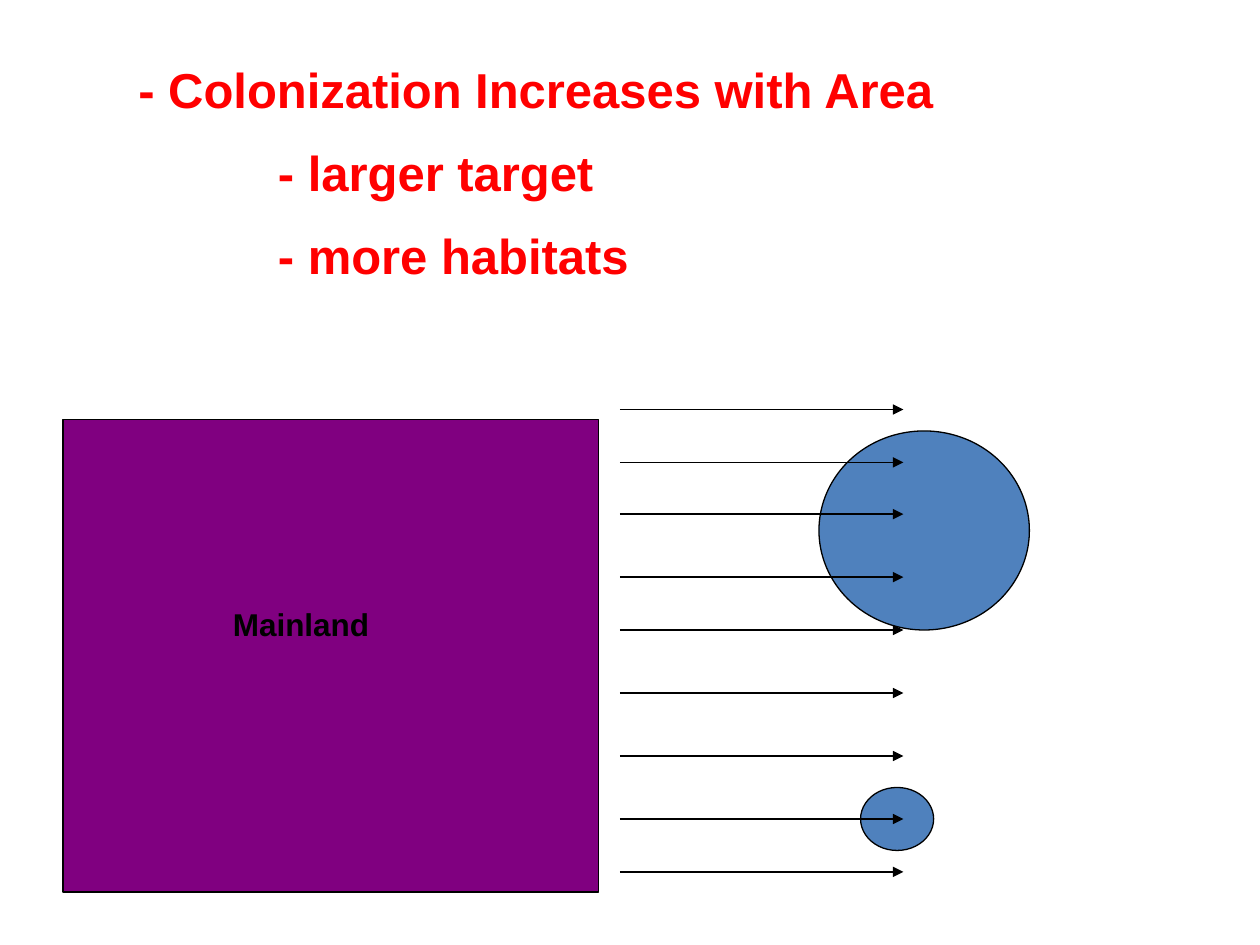
from pptx import Presentation
from pptx.dml.color import RGBColor
from pptx.enum.shapes import MSO_CONNECTOR as Link, MSO_SHAPE as Kind
from pptx.oxml.ns import qn
from pptx.util import Inches, Pt
from lxml.etree import SubElement

RED = RGBColor(0xFF, 0, 0)
BLACK = RGBColor(0, 0, 0)
PURPLE = RGBColor(0x80, 0, 0x80)
BLUE = RGBColor(0x4F, 0x81, 0xBD)

POINTS = [
    "- Colonization Increases with Area",
    "\t - larger target",
    "\t - more habitats",
]
LAND = (0.5, 3.33, 4.25, 3.75)
ISLES = [(6.5, 3.42, 1.67, 1.58), (6.83, 6.25, 0.58, 0.5)]
START, END = 4.92, 7.17
ROWS = [3.25, 3.67, 4.08, 4.58, 5, 5.5, 6, 6.5, 6.92]


def add_text(slide, box, lines, size, color):
    frame = slide.shapes.add_textbox(*map(Inches, box)).text_frame
    frame.word_wrap = True
    frame.text = "\n".join(lines)
    for i, para in enumerate(frame.paragraphs):
        if i:
            para.space_before = Pt(size * 0.5)
            tabs = SubElement(para._p.get_or_add_pPr(), qn("a:tabLst"))
            SubElement(tabs, qn("a:tab"), pos=str(Inches(1)), algn="l")
        for run in para.runs:
            font = run.font
            font.name, font.size, font.bold = "Arial", Pt(size), True
            font.color.rgb = color


def set_line(line):
    line.color.rgb = BLACK
    line.width = Pt(0.75)


def add_shape(slide, kind, box, color):
    shape = slide.shapes.add_shape(kind, *map(Inches, box))
    shape.shadow.inherit = False
    shape.fill.solid()
    shape.fill.fore_color.rgb = color
    set_line(shape.line)


def add_arrow(slide, y):
    ends = map(Inches, (START, y, END, y))
    arrow = slide.shapes.add_connector(Link.STRAIGHT, *ends)
    set_line(arrow.line)
    props = arrow.element.spPr
    SubElement(props.find(qn("a:ln")), qn("a:tailEnd"), type="triangle")
    SubElement(props, qn("a:effectLst"))


def main():
    deck = Presentation()
    deck.slide_width, deck.slide_height = Inches(10), Inches(7.5)
    slide = deck.slides.add_slide(deck.slide_layouts[6])
    add_text(slide, (1, 0.42, 8.67, 1.99), POINTS, 28, RED)
    add_shape(slide, Kind.RECTANGLE, LAND, PURPLE)
    add_text(slide, (1.75, 4.75, 2.5, 0.4), ["Mainland"], 18, BLACK)
    for isle in ISLES:
        add_shape(slide, Kind.OVAL, isle, BLUE)
    for y in ROWS:
        add_arrow(slide, y)
    deck.save("out.pptx")


if __name__ == "__main__":
    main()
